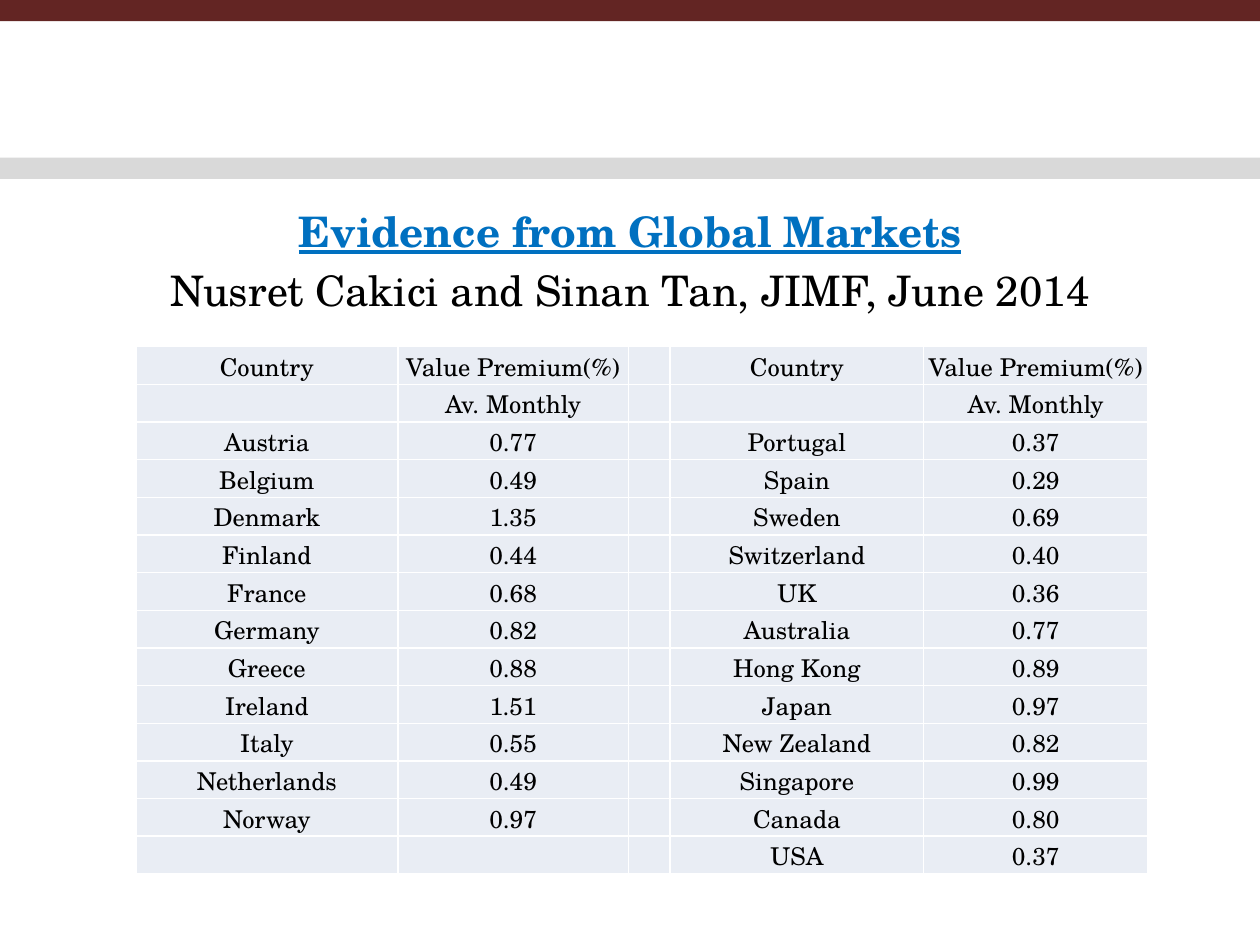
from dataclasses import dataclass

from lxml.etree import SubElement
from pptx import Presentation
from pptx.dml.color import RGBColor
from pptx.enum.shapes import MSO_SHAPE
from pptx.enum.text import MSO_ANCHOR, MSO_AUTO_SIZE, PP_ALIGN
from pptx.oxml.ns import qn
from pptx.util import Cm, Pt


@dataclass(frozen=True)
class Theme:
    """Colours, font and type sizes of the slide."""
    font: str = "TeX Gyre Schola"
    maroon: str = "632523"
    grey: str = "D9D9D9"
    blue: str = "0070C0"
    black: str = "000000"
    cell: str = "E9EDF4"
    border: str = "FFFFFF"
    heading_size: int = 24
    table_size: int = 14


THEME = Theme()
COLUMN_WIDTHS = (5.28, 4.65, 0.84, 5.11, 4.52)
ROW_HEIGHT = 0.75
HEADER = [("Country", "Value Premium(%)"), ("", "Av. Monthly")]
LEFT_MARKETS = [
    ("Austria", "0.77"), ("Belgium", "0.49"), ("Denmark", "1.35"),
    ("Finland", "0.44"), ("France", "0.68"), ("Germany", "0.82"),
    ("Greece", "0.88"), ("Ireland", "1.51"), ("Italy", "0.55"),
    ("Netherlands", "0.49"), ("Norway", "0.97"), ("", ""),
]
RIGHT_MARKETS = [
    ("Portugal", "0.37"), ("Spain", "0.29"), ("Sweden", "0.69"),
    ("Switzerland", "0.40"), ("UK", "0.36"), ("Australia", "0.77"),
    ("Hong Kong", "0.89"), ("Japan", "0.97"), ("New Zealand", "0.82"),
    ("Singapore", "0.99"), ("Canada", "0.80"), ("USA", "0.37"),
]


def add_bar(page, top, color):
    """Draw a full-width band."""
    bar = page.shapes.add_shape(
        MSO_SHAPE.RECTANGLE, Cm(0), Cm(top), Cm(25.4), Cm(0.43))
    bar.shadow.inherit = False
    bar.fill.solid()
    bar.fill.fore_color.rgb = RGBColor.from_string(color)
    bar.line.fill.background()


def add_span(para, text, size, color, emphasis=False):
    """Add one formatted run to a centred paragraph."""
    para.alignment = PP_ALIGN.CENTER
    span = para.add_run()
    span.text = text
    span.font.name = THEME.font
    span.font.size = Pt(size)
    span.font.color.rgb = RGBColor.from_string(color)
    span.font.bold = emphasis
    span.font.underline = emphasis


def fill_title(page):
    """Place the heading and the source of the evidence."""
    box = page.shapes.title
    box.left, box.top, box.width, box.height = (
        Cm(1.27), Cm(4.01), Cm(22.86), Cm(12.57))
    frame = box.text_frame
    frame.word_wrap = True
    frame.auto_size = MSO_AUTO_SIZE.NONE
    frame.vertical_anchor = MSO_ANCHOR.TOP
    add_span(frame.paragraphs[0], "Evidence from Global Markets",
             THEME.heading_size, THEME.blue, emphasis=True)
    para = frame.add_paragraph()
    para.space_before = Pt(4.8)
    add_span(para, "Nusret Cakici and Sinan Tan, JIMF, June 2014",
             THEME.heading_size, THEME.black)


def add_borders(cell):
    """Give a cell thin lines on all four sides."""
    properties = cell._tc.get_or_add_tcPr()
    for side in ("a:lnL", "a:lnR", "a:lnT", "a:lnB"):
        line = SubElement(properties, qn(side), w=str(Pt(1)))
        paint = SubElement(line, qn("a:solidFill"))
        SubElement(paint, qn("a:srgbClr"), val=THEME.border)


def fill_cell(cell, text):
    """Format a table cell and write its text."""
    add_borders(cell)
    cell.fill.solid()
    cell.fill.fore_color.rgb = RGBColor.from_string(THEME.cell)
    cell.margin_left = cell.margin_right = cell.margin_top = Cm(0.03)
    cell.margin_bottom = Cm(0)
    cell.vertical_anchor = MSO_ANCHOR.BOTTOM
    para = cell.text_frame.paragraphs[0]
    if text:
        add_span(para, text, THEME.table_size, THEME.black)
    else:
        SubElement(para._p, qn("a:endParaRPr"), sz=str(THEME.table_size * 100))


def add_premium_table(page):
    """Set the two country lists side by side in one table."""
    rows = [(*left, "", *right) for left, right in
            zip(HEADER + LEFT_MARKETS, HEADER + RIGHT_MARKETS)]
    table = page.shapes.add_table(
        len(rows), len(COLUMN_WIDTHS), Cm(2.74), Cm(6.99),
        Cm(sum(COLUMN_WIDTHS)), Cm(ROW_HEIGHT * len(rows))).table
    table.first_row = False
    table.horz_banding = False
    for column, width in zip(table.columns, COLUMN_WIDTHS):
        column.width = Cm(width)
    for row, texts in zip(table.rows, rows):
        row.height = Cm(ROW_HEIGHT)
        for cell, text in zip(row.cells, texts):
            fill_cell(cell, text)


def main():
    """Build and save the slide."""
    deck = Presentation()
    deck.slide_width, deck.slide_height = Cm(25.4), Cm(19.05)
    page = deck.slides.add_slide(deck.slide_layouts[5])
    add_bar(page, 0, THEME.maroon)
    add_bar(page, 3.18, THEME.grey)
    fill_title(page)
    add_premium_table(page)
    deck.save("out.pptx")


if __name__ == "__main__":
    main()
